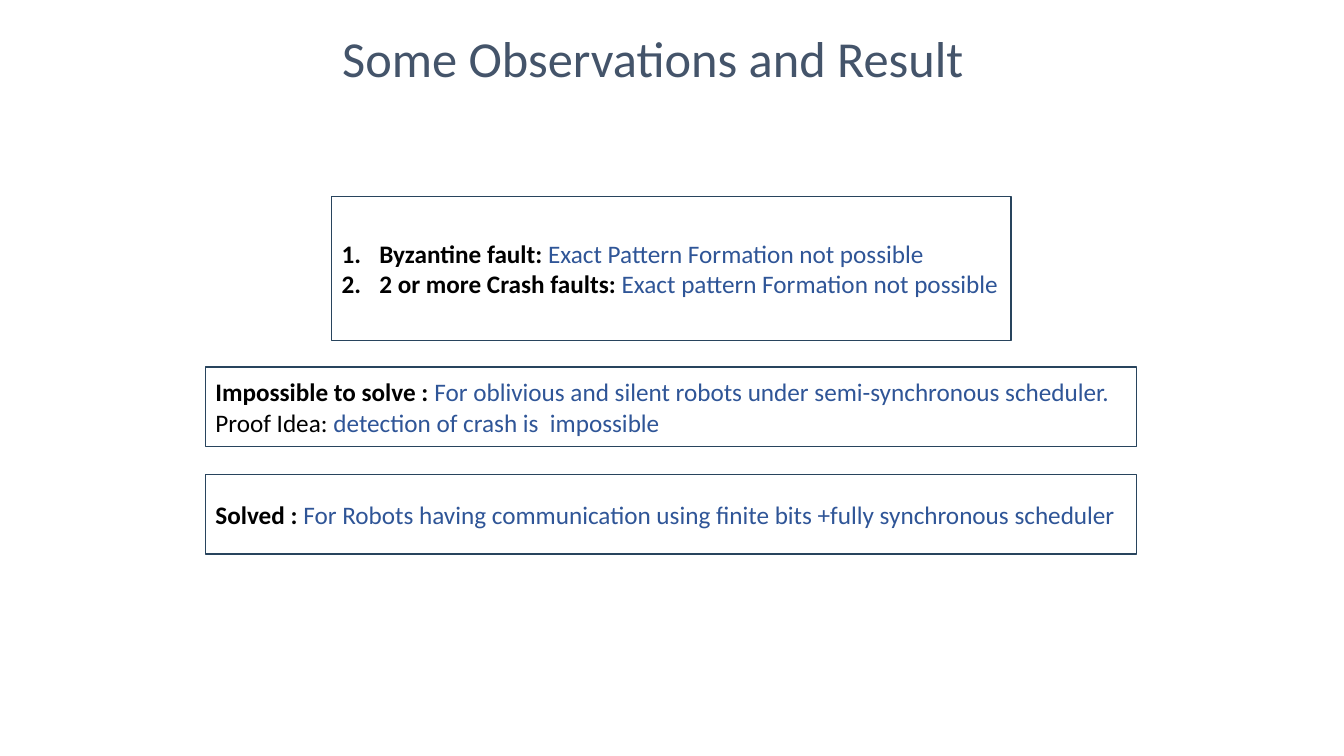
import pptx
import pptx.dml.color
import pptx.enum.shapes
import pptx.enum.text
import pptx.oxml
import pptx.oxml.ns
import pptx.util
from pptx.util import Cm

SLATE = pptx.dml.color.RGBColor(0x44, 0x54, 0x6A)
NAVY = pptx.dml.color.RGBColor(0x28, 0x44, 0x5D)
BLUE = pptx.dml.color.RGBColor(0x2F, 0x55, 0x97)
BLACK = pptx.dml.color.RGBColor(0, 0, 0)

FONT = "Calibri"
NUMBER_INDENT = Cm(0.95)

# Each statement is a label, its explanation, and whether the label is bold
FAULTS = [
    ("Byzantine fault: ", "Exact Pattern Formation not possible", True),
    ("2 or more Crash faults: ", "Exact pattern Formation not possible", True),
]
IMPOSSIBLE = [
    ("Impossible to solve : ",
     "For oblivious and silent robots under semi-synchronous scheduler.", True),
    ("Proof Idea: ", "detection of crash is  impossible", False),
]
SOLVED = [
    ("Solved : ",
     "For Robots having communication using finite bits +fully synchronous scheduler", True),
]


def add_text(paragraph, text, size=18, color=BLACK, bold=False):
    run = paragraph.add_run()
    run.text = text
    run.font.name = FONT
    run.font.size = pptx.util.Pt(size)
    run.font.bold = bold
    run.font.color.rgb = color


def number_paragraph(paragraph):
    properties = paragraph._p.get_or_add_pPr()
    properties.set("marL", str(NUMBER_INDENT))
    properties.set("indent", str(-NUMBER_INDENT))
    for tag, name, value in (("a:buFont", "typeface", "+mj-lt"),
                             ("a:buAutoNum", "type", "arabicPeriod")):
        bullet = pptx.oxml.parse_xml(f'<{tag} {pptx.oxml.ns.nsdecls("a")} {name}="{value}"/>')
        properties.append(bullet)


def place_title(slide, left, top, width, height):
    title = slide.shapes.title
    title.left, title.top, title.width, title.height = left, top, width, height
    frame = title.text_frame
    frame.auto_size = pptx.enum.text.MSO_AUTO_SIZE.NONE
    frame.vertical_anchor = pptx.enum.text.MSO_ANCHOR.MIDDLE
    heading = frame.paragraphs[0]
    heading.alignment = pptx.enum.text.PP_ALIGN.CENTER
    add_text(heading, "Some Observations and Result", size=36, color=SLATE)


def add_result_box(slide, statements, left, top, width, height, numbered=False):
    box = slide.shapes.add_shape(
        pptx.enum.shapes.MSO_SHAPE.RECTANGLE, left, top, width, height)
    box.shadow.inherit = False
    box.fill.background()
    box.line.color.rgb = NAVY
    box.line.width = pptx.util.Pt(1)
    frame = box.text_frame
    frame.word_wrap = True
    frame.vertical_anchor = pptx.enum.text.MSO_ANCHOR.MIDDLE
    for index, (label, explanation, bold) in enumerate(statements):
        paragraph = frame.add_paragraph() if index else frame.paragraphs[0]
        paragraph.alignment = pptx.enum.text.PP_ALIGN.LEFT
        if numbered:
            number_paragraph(paragraph)
        add_text(paragraph, label, bold=bold)
        add_text(paragraph, explanation, color=BLUE)


def main():
    presentation = pptx.Presentation()
    presentation.slide_width = Cm(33.87)
    presentation.slide_height = Cm(19.05)
    slide = presentation.slides.add_slide(presentation.slide_layouts[5])

    # Title
    place_title(slide, Cm(2.69), Cm(0.66), Cm(27.53), Cm(1.57))

    # Fault observations
    add_result_box(slide, FAULTS, Cm(8.36), Cm(4.95), Cm(17.12), Cm(3.63), numbered=True)

    # Results, stacked at an equal step
    for row, statements in enumerate((IMPOSSIBLE, SOLVED)):
        add_result_box(slide, statements, Cm(5.18), Cm(9.25 + row * 2.7), Cm(23.47), Cm(2.01))

    presentation.save("out.pptx")


if __name__ == "__main__":
    main()
